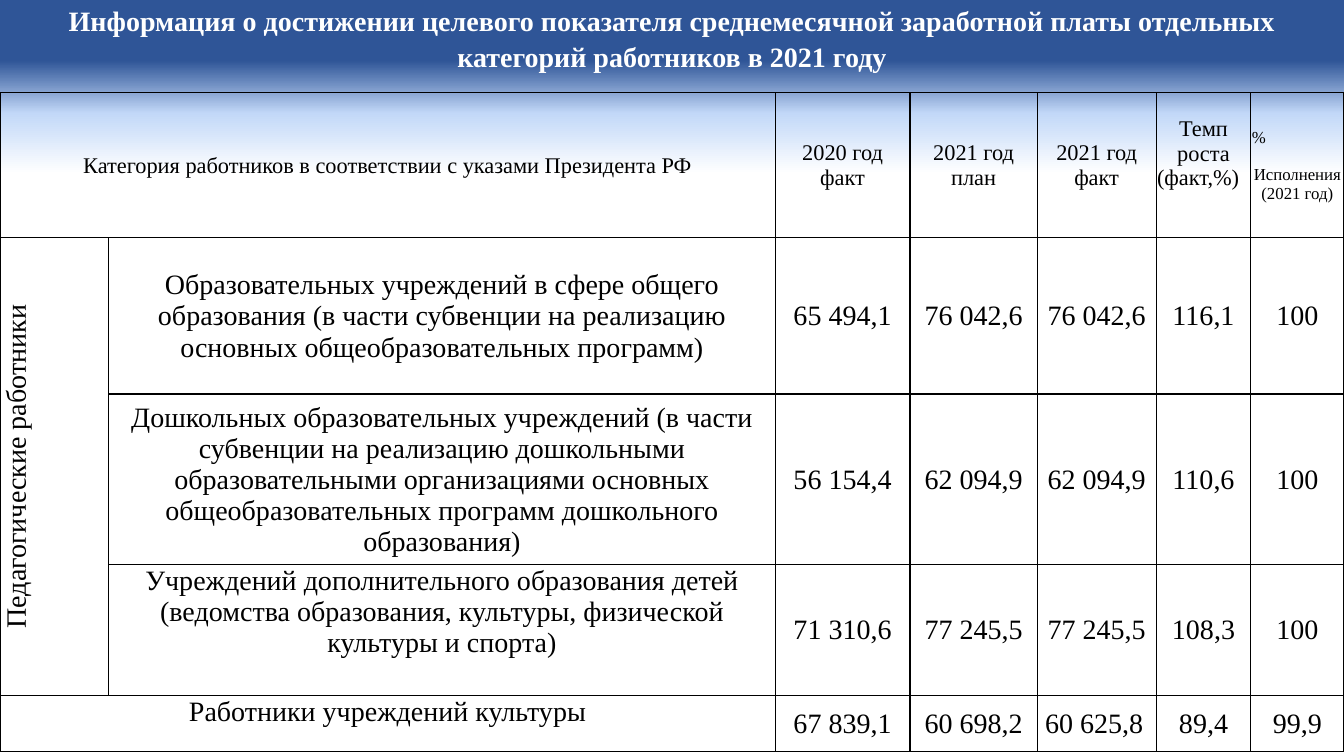
from copy import deepcopy
from dataclasses import dataclass

from lxml import etree
from pptx import Presentation
from pptx.dml.color import RGBColor
from pptx.enum import text
from pptx.oxml import ns
from pptx.slide import Slide
from pptx.table import Table, _Cell
from pptx.text.text import _Paragraph
from pptx.util import Pt

COLORS = {"navy": "2F5597", "sky": "C2D8F8", "white": "FFFFFF", "black": "000000"}
FONT = "Times New Roman"
CENTER, LEFT = text.PP_ALIGN.CENTER, text.PP_ALIGN.LEFT
MIDDLE, TOP = text.MSO_ANCHOR.MIDDLE, text.MSO_ANCHOR.TOP

TITLE = ("Информация о достижении целевого показателя среднемесячной "
         "заработной платы отдельных категорий работников в 2021 году")
COLUMN_WIDTHS = [77.8, 475.9, 96.4, 90.8, 85, 67.7, 66.4]
ROW_HEIGHTS = [103.7, 111.6, 121.7, 93.6, 40.3]


@dataclass
class Line:
    text: str
    align: text.PP_ALIGN = CENTER
    space_after: float = 0


@dataclass
class Entry:
    row: int
    column: int
    lines: list[Line]
    size: float = 20
    anchor: text.MSO_ANCHOR = MIDDLE
    bottom: float = 0
    rows: int = 1
    columns: int = 1
    vertical: bool = False


HEADER = [
    Entry(0, 0, [Line("Категория работников в соответствии с указами Президента РФ")],
          size=16, columns=2),
    Entry(0, 2, [Line("2020 год"), Line("факт")], size=16),
    Entry(0, 3, [Line("2021 год"), Line("план")], size=16),
    Entry(0, 4, [Line("2021 год"), Line("факт")], size=16),
    Entry(0, 5, [Line("Темп роста"), Line("(факт,%)", LEFT)], size=16, bottom=17.5),
    Entry(0, 6, [Line("%", LEFT, 13.5), Line("Исполнения (2021 год)")], size=12),
]
CATEGORIES = [
    Entry(1, 0, [Line("Педагогические работники")], rows=3, vertical=True),
    Entry(1, 1, [Line("Образовательных учреждений в сфере общего образования (в части "
                      "субвенции на реализацию основных общеобразовательных программ)")]),
    Entry(2, 1, [Line("Дошкольных образовательных учреждений (в части субвенции на "
                      "реализацию дошкольными образовательными организациями основных "
                      "общеобразовательных программ дошкольного образования)")]),
    Entry(3, 1, [Line("Учреждений дополнительного образования детей (ведомства "
                      "образования, культуры, физической культуры и спорта)")], anchor=TOP),
    Entry(4, 0, [Line("Работники учреждений культуры")], anchor=TOP, columns=2),
]
SALARIES = [
    ["65 494,1", "76 042,6", "76 042,6", "116,1", "100"],
    ["56 154,4", "62 094,9", "62 094,9", "110,6", "100"],
    ["71 310,6", "77 245,5", "77 245,5", "108,3", "100"],
    ["67 839,1", "60 698,2", " 60 625,8", "89,4", "99,9"],
]


def rgb(name: str) -> RGBColor:
    return RGBColor.from_string(COLORS[name])


def add_run(paragraph: _Paragraph, content: str, size: float, color: str,
            bold: bool = False) -> None:
    run = paragraph.add_run()
    run.text = content
    run.font.name = FONT
    run.font.size = Pt(size)
    run.font.bold = bold
    run.font.color.rgb = rgb(color)


def paint_background(slide: Slide) -> None:
    fill = slide.background.fill
    fill.gradient()
    fill.gradient_angle = 270
    stop_list = slide.element.find(".//" + ns.qn("a:gsLst"))
    stop_list.append(deepcopy(stop_list[0]))
    stops = [("navy", 0.08), ("sky", 0.15), ("white", 0.23)]
    for stop, (color, position) in zip(fill.gradient_stops, stops):
        stop.color.rgb = rgb(color)
        stop.position = position


def add_title(slide: Slide) -> None:
    shape = slide.shapes.add_textbox(Pt(0), Pt(-19.4), Pt(960), Pt(74.9))
    frame = shape.text_frame
    frame.word_wrap = True
    frame.vertical_anchor = text.MSO_ANCHOR.BOTTOM
    paragraph = frame.paragraphs[0]
    paragraph.alignment = CENTER
    paragraph.line_spacing = 1.07
    add_run(paragraph, TITLE, 20, "white", bold=True)


def add_borders(cell: _Cell) -> None:
    properties = cell._tc.get_or_add_tcPr()
    for index, side in enumerate(("lnL", "lnR", "lnT", "lnB")):
        line = etree.Element(ns.qn("a:" + side), w=str(Pt(1)))
        fill = etree.SubElement(line, ns.qn("a:solidFill"))
        etree.SubElement(fill, ns.qn("a:srgbClr"), val=COLORS["black"])
        properties.insert(index, line)


def fill_entry(table: Table, entry: Entry) -> None:
    cell = table.cell(entry.row, entry.column)
    if entry.rows * entry.columns > 1:
        cell.merge(table.cell(entry.row + entry.rows - 1, entry.column + entry.columns - 1))
    cell.vertical_anchor = entry.anchor
    cell.margin_bottom = Pt(entry.bottom)
    if entry.vertical:
        cell._tc.get_or_add_tcPr().set("vert", "vert270")
    frame = cell.text_frame
    for index, line in enumerate(entry.lines):
        paragraph = frame.add_paragraph() if index else frame.paragraphs[0]
        paragraph.alignment = line.align
        paragraph.space_after = Pt(line.space_after)
        add_run(paragraph, line.text, entry.size, "black")


def add_salary_table(slide: Slide) -> None:
    table = slide.shapes.add_table(len(ROW_HEIGHTS), len(COLUMN_WIDTHS), Pt(0), Pt(66.2),
                                   Pt(960), Pt(sum(ROW_HEIGHTS))).table
    table.first_row = table.horz_banding = False
    for column, width in zip(table.columns, COLUMN_WIDTHS):
        column.width = Pt(width)
    for row, height in zip(table.rows, ROW_HEIGHTS):
        row.height = Pt(height)

    # Plain bordered cells
    for cell in table.iter_cells():
        cell.fill.background()
        cell.margin_left = cell.margin_right = cell.margin_top = Pt(0.7)
        add_borders(cell)

    # Cell text
    values = [Entry(row, column, [Line(value, LEFT if value.startswith(" ") else CENTER)])
              for row, salaries in enumerate(SALARIES, start=1)
              for column, value in enumerate(salaries, start=2)]
    for entry in HEADER + CATEGORIES + values:
        fill_entry(table, entry)


def main() -> None:
    presentation = Presentation()
    presentation.slide_width, presentation.slide_height = Pt(960), Pt(540)
    slide = presentation.slides.add_slide(presentation.slide_layouts[6])
    paint_background(slide)
    add_title(slide)
    add_salary_table(slide)
    presentation.save("out.pptx")


if __name__ == "__main__":
    main()
